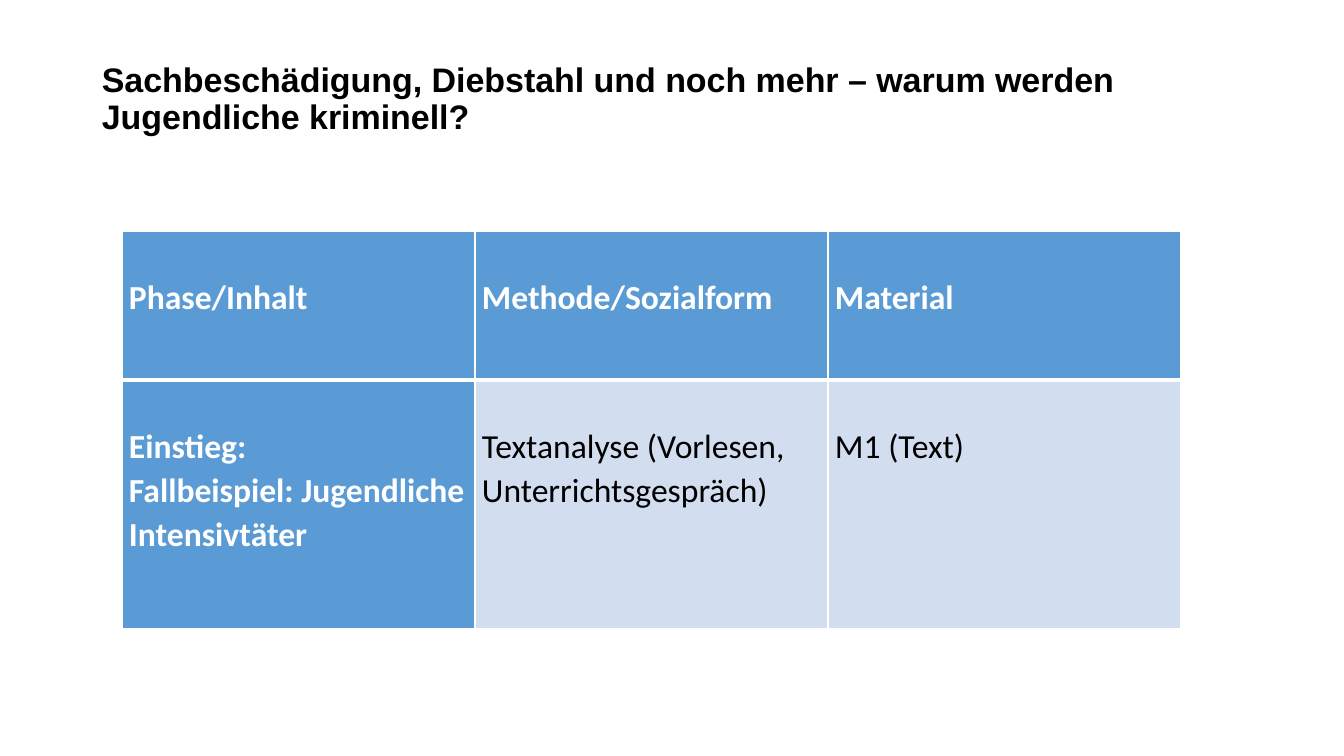
from lxml.etree import SubElement
from pptx import Presentation
from pptx.dml.color import RGBColor
from pptx.enum.text import MSO_ANCHOR
from pptx.oxml.ns import qn
from pptx.util import Pt

PX = 914400 / 100.8
WHITE = RGBColor(0xFF, 0xFF, 0xFF)
BLACK = RGBColor(0, 0, 0)
BLUE = RGBColor(0x5B, 0x9B, 0xD5)
PALE = RGBColor(0xD2, 0xDE, 0xEF)


def px(n):
    return round(n * PX)


def add_run(p, text, font, size, color, bold):
    r = p.add_run()
    r.text = text
    r.font.name = font
    r.font.size = Pt(size)
    r.font.color.rgb = color
    r.font.bold = bold


prs = Presentation()
prs.slide_width, prs.slide_height = px(1344), px(756)
s = prs.slides.add_slide(prs.slide_layouts[6])

title = s.shapes.add_textbox(px(92), px(40), px(1160), px(146))
tf = title.text_frame
tf.word_wrap = True
tf.vertical_anchor = MSO_ANCHOR.MIDDLE
tf.margin_bottom = px(31)
p = tf.paragraphs[0]
p.line_spacing = 0.9
add_run(p, "Sachbeschädigung, Diebstahl und noch mehr – warum werden Jugendliche kriminell?",
        "Arial", 24.3, BLACK, True)

rows = [
    [["Phase/Inhalt"], ["Methode/Sozialform"], ["Material"]],
    [["Einstieg:", "Fallbeispiel: Jugendliche Intensivtäter"],
     ["Textanalyse (Vorlesen,", "Unterrichtsgespräch)"],
     ["M1 (Text)"]],
]
table = s.shapes.add_table(2, 3, px(122), px(231), px(1059), px(398)).table
table.horz_banding = False
for col in table.columns:
    col.width = px(353)
for row, height in zip(table.rows, (149, 249)):
    row.height = px(height)

for i, row in enumerate(rows):
    for j, lines in enumerate(row):
        cell = table.cell(i, j)
        heading = i == 0 or j == 0
        cell.margin_left = cell.margin_right = px(7)
        cell.margin_top, cell.margin_bottom = px(44), 0
        tf = cell.text_frame
        for k, line in enumerate(lines):
            p = tf.add_paragraph() if k else tf.paragraphs[0]
            p.line_spacing = 1.07
            add_run(p, line, "Calibri", 24, WHITE if heading else BLACK, heading)

        tcPr = cell._tc.get_or_add_tcPr()
        inner_edge = "lnT" if i else "lnB"
        for edge in ("lnL", "lnR", "lnT", "lnB"):
            ln = SubElement(tcPr, qn("a:" + edge), w=str(Pt(3 if edge == inner_edge else 1)))
            fill = SubElement(ln, qn("a:solidFill"))
            SubElement(fill, qn("a:srgbClr"), val=str(WHITE))
        cell.fill.solid()
        cell.fill.fore_color.rgb = BLUE if heading else PALE

prs.save("out.pptx")
